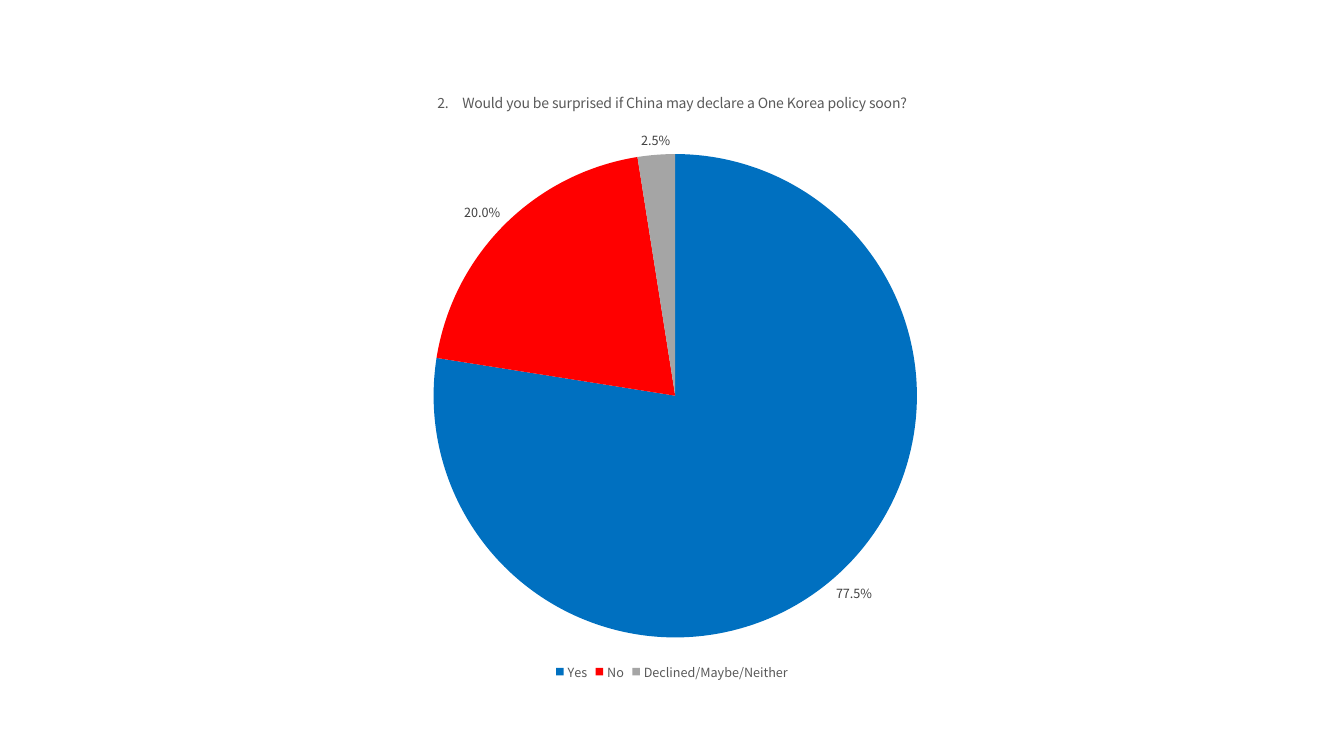
"""Builds a slide with one pie chart of survey answers."""
import pptx
import pptx.chart.data
import pptx.dml.color
import pptx.enum.chart
import pptx.util

QUESTION = "2.\u2003Would you be surprised if China may declare a One Korea policy soon?".replace("\u2003", chr(8195))
ANSWERS = {"Yes": 0.775, "No": 0.2, "Declined/Maybe/Neither": 0.025}
THEME = {
    "font": "Noto Sans CJK KR",
    "slices": ["0070C0", "FF0000", "A5A5A5"],
    "title": {"size": 10, "color": "595959"},
    "legend": {"size": 9, "color": "595959"},
    "labels": {"size": 9, "color": "404040"},
}
SLIDE_W, SLIDE_H = 33.87, 19.05
MARGIN = 1.78
CHART_H = 15.47
BLANK_LAYOUT = 6


def style(font, role):
    values = {
        "name": THEME["font"],
        "size": pptx.util.Pt(THEME[role]["size"]),
        "bold": False,
    }
    for name, value in values.items():
        setattr(font, name, value)
    font.color.rgb = pptx.dml.color.RGBColor.from_string(THEME[role]["color"])


def add_pie(s):
    data = pptx.chart.data.CategoryChartData(number_format="0.0%")
    data.categories = list(ANSWERS)
    data.add_series(QUESTION, list(ANSWERS.values()))
    box = [pptx.util.Cm(v) for v in (MARGIN, MARGIN, SLIDE_W - 2 * MARGIN, CHART_H)]
    chart = s.shapes.add_chart(pptx.enum.chart.XL_CHART_TYPE.PIE, *box, data).chart
    style(chart.font, "legend")

    p = chart.chart_title.text_frame.paragraphs[0]
    r = p.add_run()
    r.text = QUESTION
    style(p.font, "title")
    style(r.font, "title")
    chart.chart_title.include_in_layout = False

    chart.has_legend = True
    chart.legend.position = pptx.enum.chart.XL_LEGEND_POSITION.BOTTOM
    chart.legend.include_in_layout = False
    style(chart.legend.font, "legend")

    plot = chart.plots[0]
    plot.vary_by_categories = True
    plot.has_data_labels = True
    label_format = {
        "show_value": True,
        "show_percentage": False,
        "number_format": "0.0%",
        "number_format_is_linked": False,
        "position": pptx.enum.chart.XL_LABEL_POSITION.OUTSIDE_END,
    }
    for name, value in label_format.items():
        setattr(plot.data_labels, name, value)
    style(plot.data_labels.font, "labels")

    for i, color in enumerate(THEME["slices"]):
        piece = plot.series[0].points[i].format
        piece.fill.solid()
        piece.fill.fore_color.rgb = pptx.dml.color.RGBColor.from_string(color)
        piece.line.fill.background()


def main():
    prs = pptx.Presentation()
    prs.slide_width = pptx.util.Cm(SLIDE_W)
    prs.slide_height = pptx.util.Cm(SLIDE_H)
    s = prs.slides.add_slide(prs.slide_layouts[BLANK_LAYOUT])
    add_pie(s)
    prs.save("out.pptx")


if __name__ == "__main__":
    main()
